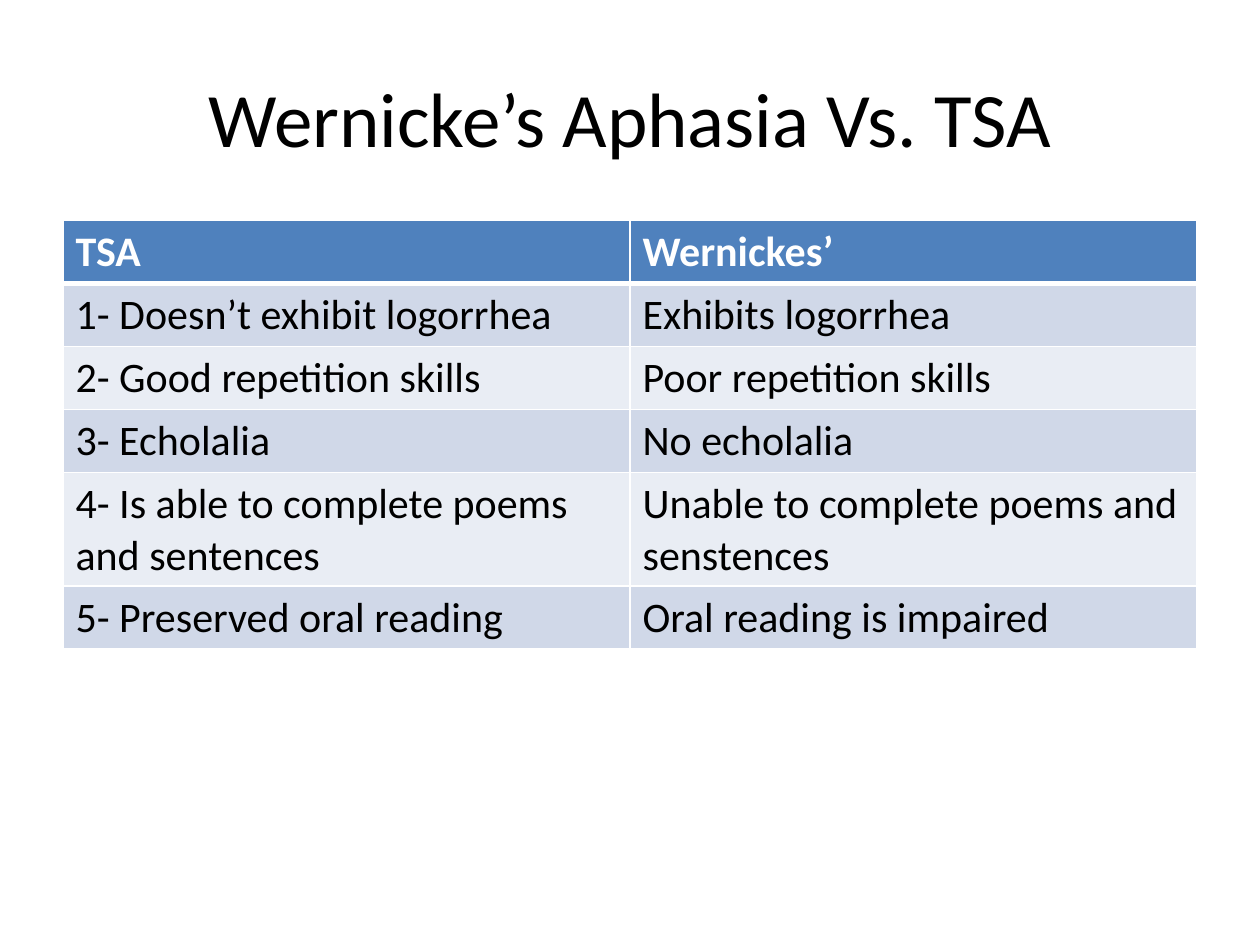
from lxml import etree
from pptx import Presentation
from pptx.dml.color import RGBColor
from pptx.enum.text import MSO_ANCHOR, PP_ALIGN
from pptx.oxml.ns import qn
from pptx.util import Pt

CENTER = PP_ALIGN.CENTER
MIDDLE = MSO_ANCHOR.MIDDLE
FONT = "Calibri"
BLACK, WHITE = "000000", "FFFFFF"
HEADER_FILL = "4F81BD"
BAND_FILLS = ("E9EDF4", "D0D8E8")
ROW_HEIGHT = 29.2
COMPARISON = [
    ("TSA", "Wernickes’"),
    ("1- Doesn’t exhibit logorrhea", "Exhibits logorrhea"),
    ("2- Good repetition skills", "Poor repetition skills"),
    ("3- Echolalia", "No echolalia"),
    ("4- Is able to complete poems and sentences", "Unable to complete poems and senstences"),
    ("5- Preserved oral reading", "Oral reading is impaired"),
]


def color(value):
    """Turn a hex string into a colour."""
    return RGBColor.from_string(value)


def write(para, text, fill, **formats):
    """Write one formatted span of text into a paragraph."""
    span = para.add_run()
    span.text = text
    for name, value in {"name": FONT, **formats}.items():
        setattr(span.font, name, value)
    span.font.color.rgb = color(fill)


def add_title(page, text):
    """Add the centred title."""
    box = page.shapes.add_textbox(Pt(36), Pt(21.6), Pt(648), Pt(90))
    frame = box.text_frame
    for name, value in {"word_wrap": True, "vertical_anchor": MIDDLE}.items():
        setattr(frame, name, value)
    para = frame.paragraphs[0]
    para.alignment = CENTER
    write(para, text, BLACK, size=Pt(44))


def add_borders(cell, widths):
    """Draw white cell borders from a dict of side and width."""
    properties = cell._tc.get_or_add_tcPr()
    for side, width in widths.items():
        line = etree.SubElement(properties, qn(f"a:ln{side}"), w=str(Pt(width)))
        fill = etree.SubElement(line, qn("a:solidFill"))
        etree.SubElement(fill, qn("a:srgbClr"), val=WHITE)


def style_cell(cell, text, row):
    """Fill one table cell according to its row."""
    header = row == 0
    add_borders(cell, {"L": 1, "R": 1, "T": 3 if row == 1 else 1, "B": 3 if header else 1})
    cell.fill.solid()
    cell.fill.fore_color.rgb = color(HEADER_FILL if header else BAND_FILLS[row % 2])
    write(cell.text_frame.paragraphs[0], text, WHITE if header else BLACK, size=Pt(24), bold=header)


def add_comparison(page, rows):
    """Add the table that compares the two conditions."""
    holder = page.shapes.add_table(len(rows), len(rows[0]), Pt(36), Pt(126), Pt(648), Pt(244.8))
    table = holder.table
    for row, texts in enumerate(rows):
        table.rows[row].height = Pt(ROW_HEIGHT)
        for column, text in enumerate(texts):
            style_cell(table.cell(row, column), text, row)
    holder.height = Pt(244.8)


def main():
    """Build and save the deck."""
    deck = Presentation()
    deck.slide_width, deck.slide_height = Pt(720), Pt(540)
    page = deck.slides.add_slide(deck.slide_layouts[6])
    add_title(page, "Wernicke’s Aphasia Vs. TSA")
    add_comparison(page, COMPARISON)
    deck.save("out.pptx")


if __name__ == "__main__":
    main()
